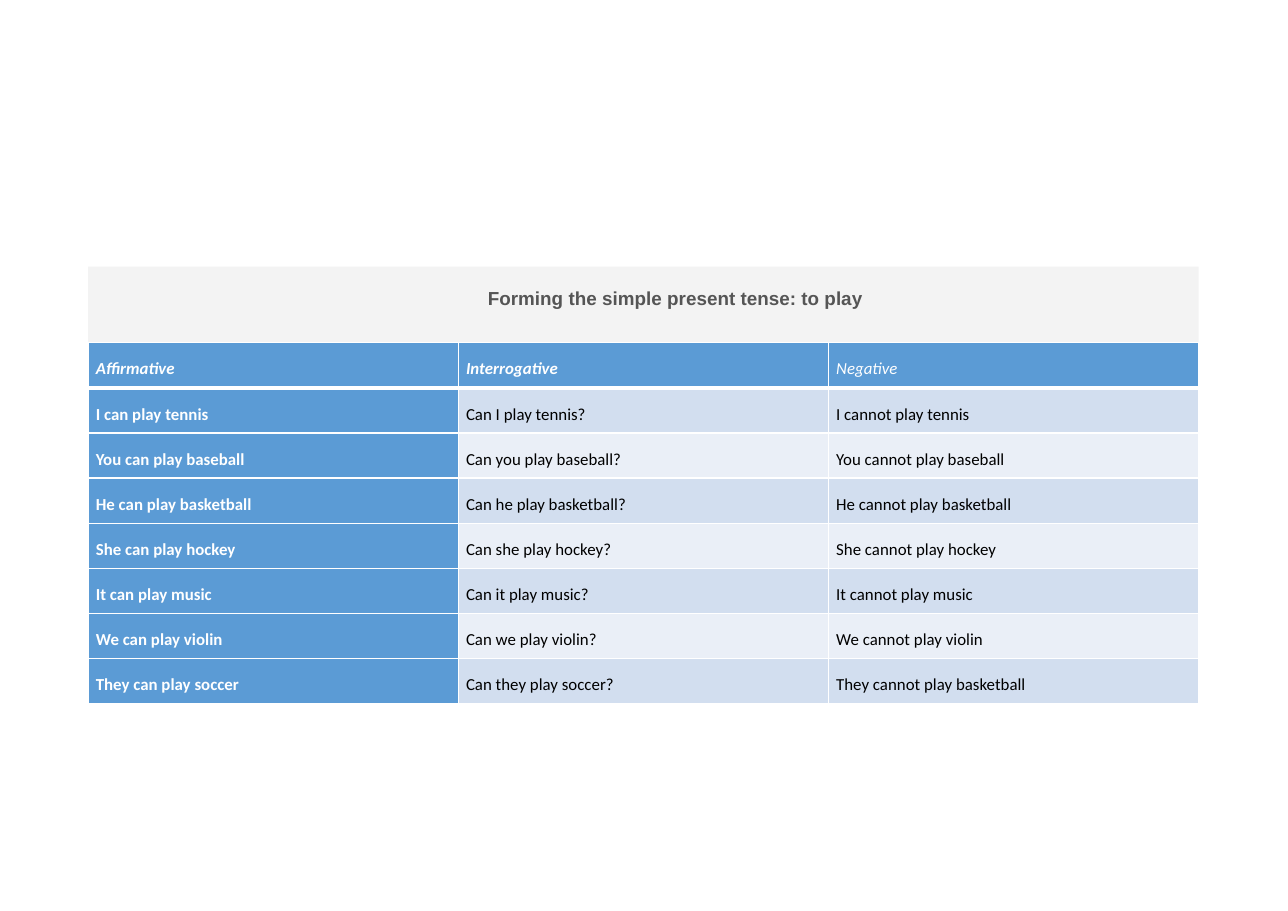
"""Build a slide with a table of sentences formed with "can play"."""
from lxml import etree
from pptx import Presentation
from pptx.dml.color import RGBColor
from pptx.enum.text import MSO_ANCHOR, MSO_AUTO_SIZE, PP_ALIGN
from pptx.oxml.ns import qn
from pptx.util import Inches, Pt

TOP = MSO_ANCHOR.TOP
NO_AUTOFIT = MSO_AUTO_SIZE.NONE
LEFT, CENTER = PP_ALIGN.LEFT, PP_ALIGN.CENTER

WHITE = RGBColor(0xFF, 0xFF, 0xFF)
BLACK = RGBColor(0x00, 0x00, 0x00)
GRAY = RGBColor(0x55, 0x55, 0x55)
PALE_GRAY = RGBColor(0xF3, 0xF3, 0xF3)
BLUE = RGBColor(0x5B, 0x9B, 0xD5)
BANDS = (RGBColor(0xEA, 0xEF, 0xF7), RGBColor(0xD2, 0xDE, 0xEF))

HEADING = "Forming the simple present tense: to play"
SENTENCES = [
    ("Affirmative", "Interrogative", "Negative"),
    ("I can play tennis", "Can I play tennis?", "I cannot play tennis"),
    ("You can play baseball", "Can you play baseball?", "You cannot play baseball"),
    ("He can play basketball", "Can he play basketball?", "He cannot play basketball"),
    ("She can play hockey", "Can she play hockey?", "She cannot play hockey"),
    ("It can play music", "Can it play music?", "It cannot play music"),
    ("We can play violin", "Can we play violin?", "We cannot play violin"),
    ("They can play soccer", "Can they play soccer?", "They cannot play basketball"),
]


def write(frame, text, *, font="Calibri", size=11, color=BLACK, bold=False,
          italic=False, align=LEFT, spacing=1.0, after=0):
    paragraph = frame.paragraphs[0]
    paragraph.alignment = align
    paragraph.line_spacing = spacing
    paragraph.space_before = Pt(0)
    paragraph.space_after = Pt(after)
    run = paragraph.add_run()
    run.text = text
    run.font.name = font
    run.font.size = Pt(size)
    run.font.color.rgb = color
    run.font.bold = bold
    run.font.italic = italic


class Lesson:
    """Holds the slide and the style of its elements."""

    left, width = 0.8, 10.08
    row_height = 0.41
    cell_inset = 0.07

    def __init__(self, slide):
        self.slide = slide

    def heading(self, text, top, height):
        title = self.slide.shapes.title
        title.left, title.top = Inches(self.left), Inches(top)
        title.width, title.height = Inches(self.width), Inches(height)
        title.fill.solid()
        title.fill.fore_color.rgb = PALE_GRAY
        frame = title.text_frame
        frame.word_wrap = True
        frame.auto_size = NO_AUTOFIT
        frame.vertical_anchor = TOP
        frame.margin_left, frame.margin_right = Inches(0.67), Inches(0.09)
        frame.margin_top, frame.margin_bottom = Inches(0.18), Inches(0.05)
        write(frame, text, font="Arial", size=12.3, color=GRAY, bold=True, align=CENTER)

    def borders(self, cell, top, bottom):
        properties = cell._tc.get_or_add_tcPr()
        for side, points in (("L", 1), ("R", 1), ("T", top), ("B", bottom)):
            line = etree.SubElement(properties, qn(f"a:ln{side}"), w=str(Pt(points)))
            fill = etree.SubElement(line, qn("a:solidFill"))
            etree.SubElement(fill, qn("a:srgbClr"), val=str(WHITE))

    def cell(self, cell, text, row, column):
        header = row == 0
        strong = header or column == 0
        self.borders(cell, top=3 if row == 1 else 1, bottom=3 if header else 1)
        cell.fill.solid()
        cell.fill.fore_color.rgb = BLUE if strong else BANDS[row % 2]
        inset = Inches(self.cell_inset)
        cell.margin_left = cell.margin_right = inset
        cell.margin_top = cell.margin_bottom = inset
        write(cell.text_frame, text, color=WHITE if strong else BLACK,
              bold=strong and column < 2, italic=header, spacing=1.41, after=15)

    def table(self, sentences, top):
        rows, columns = len(sentences), len(sentences[0])
        table = self.slide.shapes.add_table(
            rows, columns, Inches(self.left), Inches(top),
            Inches(self.width), Inches(rows * self.row_height)).table
        for column in table.columns:
            column.width = Inches(self.width / columns)
        for row, forms in enumerate(sentences):
            table.rows[row].height = Inches(self.row_height)
            for column, text in enumerate(forms):
                self.cell(table.cell(row, column), text, row, column)


def main():
    presentation = Presentation()
    presentation.slide_width = Inches(11.69)
    presentation.slide_height = Inches(8.27)
    title_only = presentation.slide_layouts[5]
    lesson = Lesson(presentation.slides.add_slide(title_only))
    lesson.heading(HEADING, top=2.42, height=0.69)
    lesson.table(SENTENCES, top=3.11)
    presentation.save("out.pptx")


if __name__ == "__main__":
    main()
